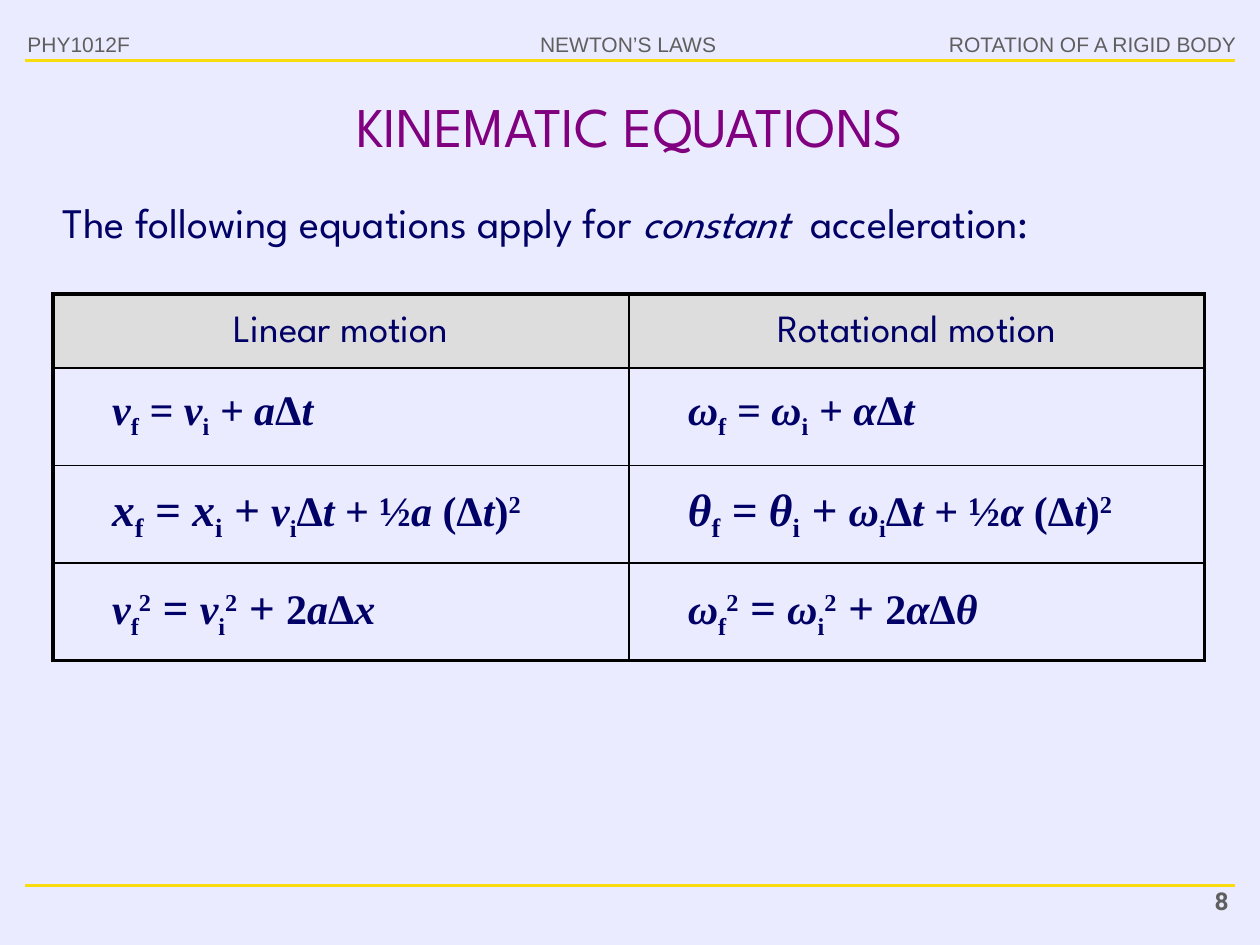
from dataclasses import dataclass

from lxml import etree
from pptx import Presentation
from pptx.dml.color import RGBColor
from pptx.enum import shapes, text
from pptx.oxml import ns
from pptx.util import Pt


@dataclass(frozen=True)
class Theme:
    background: str = "EBEBFF"
    rule: str = "F8DC0E"
    muted: str = "5F5F5F"
    title: str = "800080"
    ink: str = "000066"
    header_fill: str = "DDDDDD"
    border: str = "000000"
    display_font: str = "League Spartan"
    math_font: str = "Times New Roman"
    header_font: str = "Arial"
    number_font: str = "Roboto"
    header_size: int = 12
    number_size: int = 14
    title_size: int = 32
    body_size: int = 24
    table_size: int = 22
    large_math_size: int = 26


THEME = Theme()
ALIGN = text.PP_ALIGN
ANCHOR = text.MSO_ANCHOR
HEADER = dict(name=THEME.header_font, size=THEME.header_size, color=THEME.muted)
NUMBER = dict(name=THEME.number_font, size=THEME.number_size, color=THEME.muted, bold=True)
TITLE = dict(name=THEME.display_font, size=THEME.title_size, color=THEME.title)
BODY = dict(name=THEME.display_font, size=THEME.body_size, color=THEME.ink)
TABLE_HEAD = BODY | dict(size=THEME.table_size)
UPRIGHT = dict(name=THEME.math_font, size=THEME.body_size, color=THEME.ink, bold=True)
SLANTED = UPRIGHT | dict(italic=True)
SUBSCRIPT = UPRIGHT | dict(baseline=-25000)
SUPERSCRIPT = UPRIGHT | dict(baseline=30000)
LARGE = dict(size=THEME.large_math_size)
LARGE_SLANTED = SLANTED | LARGE
LARGE_SUBSCRIPT = SUBSCRIPT | LARGE
LARGE_GAP = BODY | LARGE


def write_runs(paragraph, runs, **paragraph_format):
    """Add (text, format) runs to the paragraph."""
    for name, value in paragraph_format.items():
        setattr(paragraph, name, value)
    for content, style in runs:
        run = paragraph.add_run()
        run.text = content
        for name, value in style.items():
            if name == "color":
                run.font.color.rgb = RGBColor.from_string(value)
            elif name == "baseline":
                run.font._element.set("baseline", str(value))
            else:
                setattr(run.font, name, Pt(value) if name == "size" else value)


def add_text(slide, box, runs, wrap=True, anchor=ANCHOR.TOP, **paragraph_format):
    shape = slide.shapes.add_textbox(*map(Pt, box))
    shape.text_frame.word_wrap = wrap
    shape.text_frame.vertical_anchor = anchor
    paragraph = shape.text_frame.paragraphs[0]
    write_runs(paragraph, runs, **paragraph_format)
    return paragraph


def add_rule(slide, left, top, width):
    line = slide.shapes.add_connector(
        shapes.MSO_CONNECTOR.STRAIGHT, Pt(left), Pt(top), Pt(left + width), Pt(top))
    line.line.color.rgb = RGBColor.from_string(THEME.rule)
    line.line.width = Pt(1.75)
    etree.SubElement(line._element.spPr, ns.qn("a:effectLst"))


def add_header(slide, left, top, width):
    add_rule(slide, left, top + 20.2, width)
    center, right = left + width / 2 + 1, left + width
    add_text(slide, (center - 60, top, 116, 21.6), [("NEWTON’S LAWS", HEADER)],
             wrap=False, alignment=ALIGN.CENTER)
    add_text(slide, (right - 174.2, top, 182.2, 21.6),
             [("ROTATION OF A RIGID BODY", HEADER)], wrap=False, alignment=ALIGN.RIGHT)
    add_text(slide, (left - 5.8, top, 85, 23), [("PHY1012F", HEADER)])


def add_footer(slide, left, top, width):
    add_rule(slide, left, top, width)
    add_text(slide, (left + width - 70.6, top - 3.6, 74.2, 26.6), [("8", NUMBER)],
             alignment=ALIGN.RIGHT)


def place_title(slide, box):
    title = slide.shapes.title
    title.left, title.top, title.width, title.height = map(Pt, box)
    title.text_frame.vertical_anchor = ANCHOR.MIDDLE
    write_runs(title.text_frame.paragraphs[0], [("KINEMATIC EQUATIONS", TITLE)],
               alignment=ALIGN.CENTER)


def add_introduction(slide, box):
    runs = [("The following equations apply for ", BODY),
            ("constant ", BODY | dict(italic=True)),
            (" acceleration:", BODY)]
    paragraph = add_text(slide, box, runs, line_spacing=1.1)
    paragraph._p.get_or_add_pPr().set("marL", str(Pt(14.4)))


def motion_equations(position, velocity, acceleration):
    """Return the three equations, as runs, in the symbols of one kind of motion."""
    return [
        [(velocity, SLANTED), ("f", SUBSCRIPT), (f" = {velocity}", SLANTED),
         ("i", SUBSCRIPT), (f" + {acceleration}", SLANTED), ("Δ", UPRIGHT), ("t", SLANTED)],
        [(position, LARGE_SLANTED), ("f", LARGE_SUBSCRIPT),
         (f" = {position}", LARGE_SLANTED), ("i", LARGE_SUBSCRIPT),
         (" + ", LARGE_SLANTED), (velocity, SLANTED), ("i", SUBSCRIPT), ("Δ", UPRIGHT),
         ("t", SLANTED), (" + ½", UPRIGHT), (f"{acceleration} ", SLANTED),
         ("(Δ", UPRIGHT), ("t", SLANTED), (")", UPRIGHT), ("2", SUPERSCRIPT)],
        [(velocity, SLANTED), ("f", SUBSCRIPT), ("2", SUPERSCRIPT), (" ", LARGE_GAP),
         ("= ", LARGE_SLANTED), (velocity, SLANTED), ("i", SUBSCRIPT),
         ("2", SUPERSCRIPT), (" + ", LARGE_SLANTED), ("2", UPRIGHT),
         (acceleration, SLANTED), ("Δ", UPRIGHT), (position, SLANTED)],
    ]


def set_borders(cell, widths):
    """Draw the left, right, top and bottom borders, in that order."""
    properties = cell._tc.get_or_add_tcPr()
    for index, (side, width) in enumerate(zip("LRTB", widths)):
        line = etree.Element(ns.qn(f"a:ln{side}"), w=str(Pt(width)))
        fill = etree.SubElement(line, ns.qn("a:solidFill"))
        etree.SubElement(fill, ns.qn("a:srgbClr"), val=THEME.border)
        properties.insert(index, line)


def add_equation_table(slide, left, top, width, header_height, row_height):
    headings = ["Linear motion", "Rotational motion"]
    columns = [motion_equations("x", "v", "a"), motion_equations("θ", "ω", "α")]
    rows, count = len(columns[0]) + 1, len(columns)
    column_width = width / count
    frame = slide.shapes.add_table(rows, count, Pt(left), Pt(top), Pt(width),
                                   Pt(header_height + (rows - 1) * row_height))
    table = frame.table
    table.first_row = table.horz_banding = False
    outer, inner = 2.25, 1
    for row in range(rows):
        table.rows[row].height = Pt(row_height if row else header_height)
        for column in range(count):
            table.columns[column].width = Pt(column_width)
            cell = table.cell(row, column)
            edges = (column == 0, column == count - 1, row == 0, row == rows - 1)
            set_borders(cell, [outer if edge else inner for edge in edges])
            if row:
                cell.fill.background()
                continue
            cell.fill.solid()
            cell.fill.fore_color.rgb = RGBColor.from_string(THEME.header_fill)
            cell.vertical_anchor = ANCHOR.MIDDLE
            write_runs(cell.text_frame.paragraphs[0], [(headings[column], TABLE_HEAD)],
                       alignment=ALIGN.CENTER, line_spacing=1.1)

    box_sizes = [(184, 39), (277, 42), (184, 42)]
    for column, equations in enumerate(columns):
        for row, (runs, size) in enumerate(zip(equations, box_sizes)):
            corner = (left + column * column_width + 26.7,
                      top + header_height + row * row_height + 3.8)
            add_text(slide, corner + size, runs, anchor=ANCHOR.MIDDLE, line_spacing=1.1)


def main():
    presentation = Presentation()
    presentation.slide_width, presentation.slide_height = Pt(720), Pt(540)
    slide = presentation.slides.add_slide(presentation.slide_layouts[5])
    slide.background.fill.solid()
    slide.background.fill.fore_color.rgb = RGBColor.from_string(THEME.background)
    add_header(slide, 14.4, 14.4, 691.2)
    add_footer(slide, 14.4, 506.2, 691.2)
    place_title(slide, (36, 45.4, 648, 51.8))
    add_introduction(slide, (14.4, 105.8, 691.2, 39))
    add_equation_table(slide, 30.3, 168, 658, 42.4, 55.7)
    presentation.save("out.pptx")


if __name__ == "__main__":
    main()
